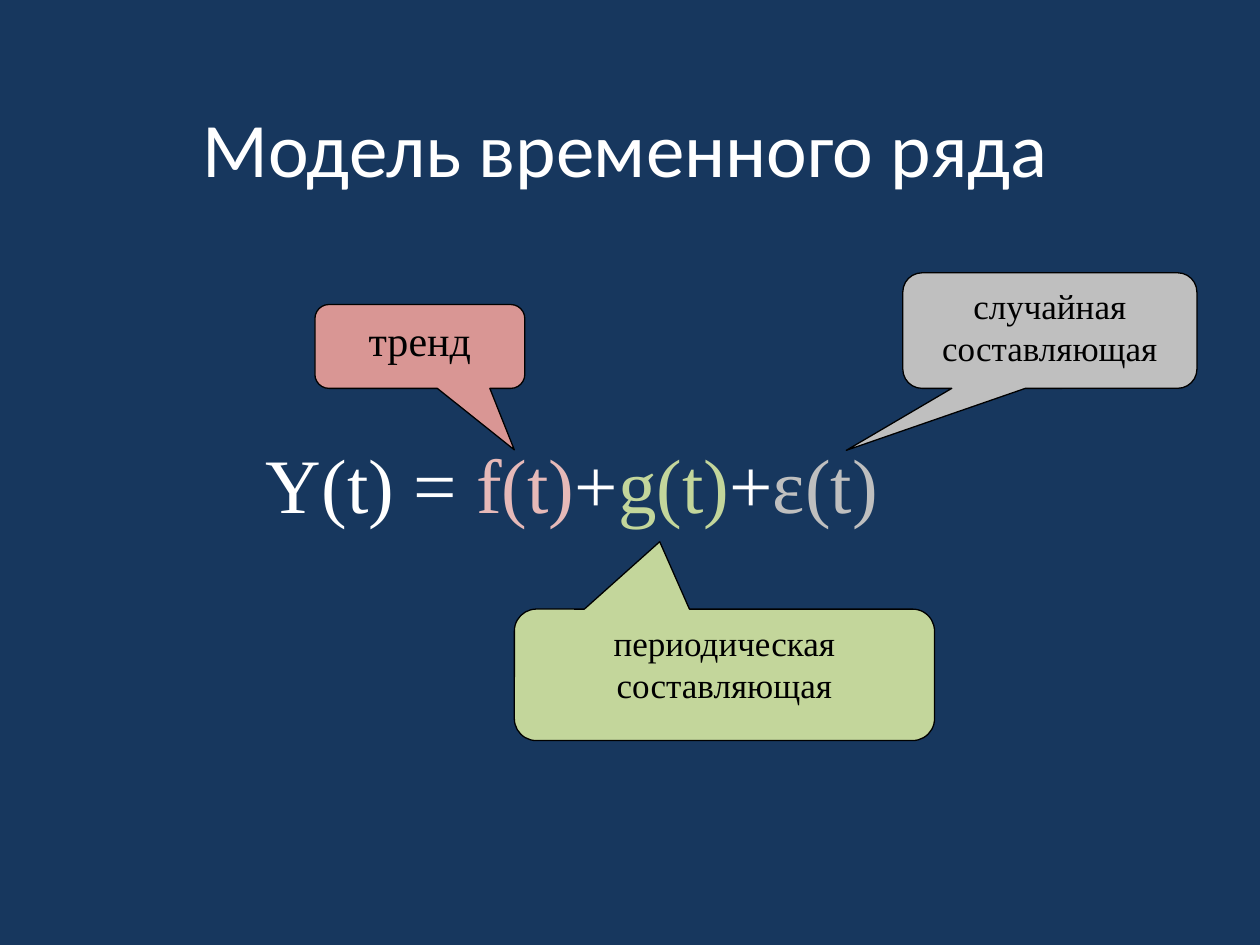
from pptx import Presentation
from pptx.dml.color import RGBColor
from pptx.enum.shapes import MSO_SHAPE as Shape
from pptx.enum.text import MSO_ANCHOR as Anchor, PP_ALIGN as Align
from pptx.util import Cm, Pt

COLORS = {
    "background": "17375E",
    "white": "FFFFFF",
    "black": "000000",
    "trend": "D99694",
    "trend_term": "E6B9B8",
    "periodic": "C3D69B",
    "random": "BFBFBF",
}
HEADING_FONT = "Calibri"
BODY_FONT = "Times New Roman"


def color(name):
    return RGBColor.from_string(COLORS[name])


def write_line(frame, spans, font, size, anchor):
    frame.word_wrap = True
    frame.vertical_anchor = anchor
    para = frame.paragraphs[0]
    para.alignment = Align.CENTER
    for text, color_name in spans:
        span = para.add_run()
        span.text = text
        span.font.name = font
        span.font.size = Pt(size)
        span.font.color.rgb = color(color_name)


def add_text_line(page, box, spans, font, anchor):
    text_box = page.shapes.add_textbox(*map(Cm, box))
    write_line(text_box.text_frame, spans, font, 44, anchor)


def add_callout(page, box, tip, text, fill, size):
    left, top, width, height = box
    callout = page.shapes.add_shape(Shape.ROUNDED_RECTANGULAR_CALLOUT, *map(Cm, box))
    callout.adjustments[0] = (tip[0] - left) / width - 0.5
    callout.adjustments[1] = (tip[1] - top) / height - 0.5
    callout.shadow.inherit = False
    callout.fill.solid()
    callout.fill.fore_color.rgb = color(fill)
    callout.line.color.rgb = color("black")
    callout.line.width = Pt(0.75)
    write_line(callout.text_frame, [(text, "black")], BODY_FONT, size, Anchor.TOP)


def add_model_page(deck):
    page = deck.slides.add_slide(deck.slide_layouts[6])
    page.background.fill.solid()
    page.background.fill.fore_color.rgb = color("background")

    add_text_line(page, (1.27, 1.9, 22.68, 2.12),
                  [("Модель временного ряда", "white")], HEADING_FONT, Anchor.MIDDLE)
    formula = [
        ("Y(t) = ", "white"),
        ("f(t)", "trend_term"),
        ("+", "white"),
        ("g(t)", "periodic"),
        ("+", "white"),
        ("ε(t)", "random"),
    ]
    add_text_line(page, (4.23, 8.68, 14.6, 2.12), formula, BODY_FONT, Anchor.TOP)

    callouts = [
        ((18.2, 5.5, 5.93, 2.33), (17.06, 9.08), "случайная составляющая", "random", 20),
        ((10.37, 12.28, 8.47, 2.65), (13.3, 10.92), "периодическая составляющая", "periodic", 20),
        ((6.35, 6.14, 4.23, 1.69), (10.37, 9.07), "тренд", "trend", 24),
    ]
    for callout in callouts:
        add_callout(page, *callout)


def main():
    deck = Presentation()
    deck.slide_width = Cm(25.4)
    deck.slide_height = Cm(19.05)
    add_model_page(deck)
    deck.save("out.pptx")


if __name__ == "__main__":
    main()
